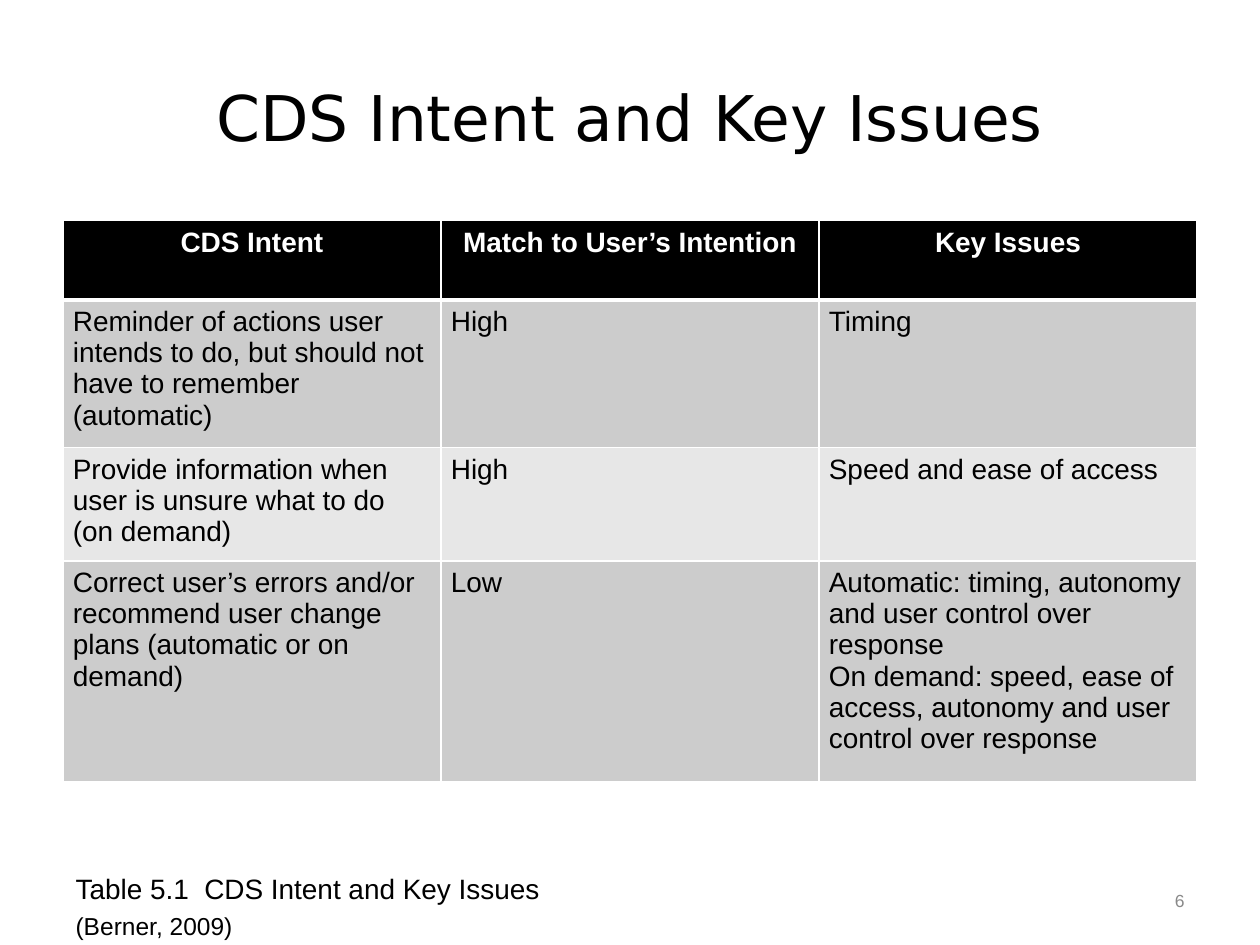
from lxml import etree
from pptx import Presentation
from pptx.dml.color import RGBColor
from pptx.enum.text import MSO_ANCHOR, MSO_AUTO_SIZE, PP_ALIGN
from pptx.oxml.ns import qn
from pptx.util import Cm, Pt

BLACK = RGBColor(0x00, 0x00, 0x00)
WHITE = RGBColor(0xFF, 0xFF, 0xFF)
DARK_BAND = RGBColor(0xCC, 0xCC, 0xCC)
LIGHT_BAND = RGBColor(0xE7, 0xE7, 0xE7)
NUMBER_GREY = RGBColor(0x89, 0x89, 0x89)
CENTER, LEFT, RIGHT = PP_ALIGN.CENTER, PP_ALIGN.LEFT, PP_ALIGN.RIGHT
MIDDLE, TOP = MSO_ANCHOR.MIDDLE, MSO_ANCHOR.TOP
NO_AUTOFIT = MSO_AUTO_SIZE.NONE

ROWS = [
    ["CDS Intent", "Match to User’s Intention", "Key Issues"],
    ["Reminder of actions user intends to do, but should not have to remember (automatic)",
     "High", "Timing"],
    ["Provide information when user is unsure what to do (on demand)",
     "High", "Speed and ease of access"],
    ["Correct user’s errors and/or recommend user change plans (automatic or on demand)",
     "Low",
     "Automatic: timing, autonomy and user control over response\n"
     "On demand: speed, ease of access, autonomy and user control over response"],
]
ROW_HEIGHTS = [1.6, 2.97, 2.29, 4.45]
ROW_FILLS = [BLACK, DARK_BAND, LIGHT_BAND, DARK_BAND]


def style(paragraph, size, color, align=LEFT, font="Arial", bold=False):
    paragraph.alignment = align
    paragraph.font.name = font
    paragraph.font.size = Pt(size)
    paragraph.font.color.rgb = color
    paragraph.font.bold = bold


def set_borders(cell, widths):
    properties = cell._tc.get_or_add_tcPr()
    for position, (side, width) in enumerate(widths.items()):
        line = etree.Element(qn(f"a:ln{side}"), w=str(Pt(width)))
        line_fill = etree.SubElement(line, qn("a:solidFill"))
        etree.SubElement(line_fill, qn("a:srgbClr"), val=str(WHITE))
        properties.insert(position, line)


prs = Presentation()
prs.slide_width, prs.slide_height = Cm(25.4), Cm(19.05)
slide = prs.slides.add_slide(prs.slide_layouts[1])

title = slide.shapes.title
title.left, title.top, title.width, title.height = Cm(1.27), Cm(0.76), Cm(22.86), Cm(3.18)
title.text_frame.text = "CDS Intent and Key Issues"
title.text_frame.auto_size = NO_AUTOFIT
title.text_frame.vertical_anchor = MIDDLE
style(title.text_frame.paragraphs[0], 36, BLACK, CENTER, "DejaVu Sans")

intents = slide.shapes.add_table(4, 3, Cm(1.27), Cm(4.45), Cm(22.86), Cm(11.31)).table
for column in intents.columns:
    column.width = Cm(7.62)
for r, (texts, height, fill) in enumerate(zip(ROWS, ROW_HEIGHTS, ROW_FILLS)):
    header = r == 0
    intents.rows[r].height = Cm(height)
    for c, text in enumerate(texts):
        cell = intents.cell(r, c)
        cell.text = text
        cell.margin_left = cell.margin_right = Cm(0.28 if header else 0.2)
        cell.margin_top = cell.margin_bottom = Cm(0.13)
        cell.fill.solid()
        cell.fill.fore_color.rgb = fill
        set_borders(cell, {"L": 1, "R": 1, "T": 3 if r == 1 else 1, "B": 3 if header else 1})
        for paragraph in cell.text_frame.paragraphs:
            style(paragraph, 16, WHITE if header else BLACK, CENTER if header else LEFT, bold=header)

caption = slide.placeholders[1]
caption.left, caption.top, caption.width, caption.height = Cm(1.27), Cm(17.45), Cm(21.21), Cm(1.47)
caption.text_frame.text = "Table 5.1  CDS Intent and Key Issues\n(Berner, 2009)"
caption.text_frame.auto_size = NO_AUTOFIT
caption.text_frame.vertical_anchor = TOP
for paragraph, size, gap in zip(caption.text_frame.paragraphs, (16, 14), (0, 3)):
    paragraph_properties = paragraph._p.get_or_add_pPr()
    paragraph_properties.set("marL", "0")
    paragraph_properties.set("indent", "0")
    etree.SubElement(paragraph_properties, qn("a:buNone"))
    paragraph.space_before = Pt(gap)
    style(paragraph, size, BLACK)

page_number = slide.shapes.add_textbox(Cm(22.71), Cm(17.4), Cm(1.42), Cm(1.52))
page_number.text_frame.word_wrap = True
page_number.text_frame.vertical_anchor = MIDDLE
page_number.text_frame.text = "6"
style(page_number.text_frame.paragraphs[0], 10, NUMBER_GREY, RIGHT)

prs.save("out.pptx")
